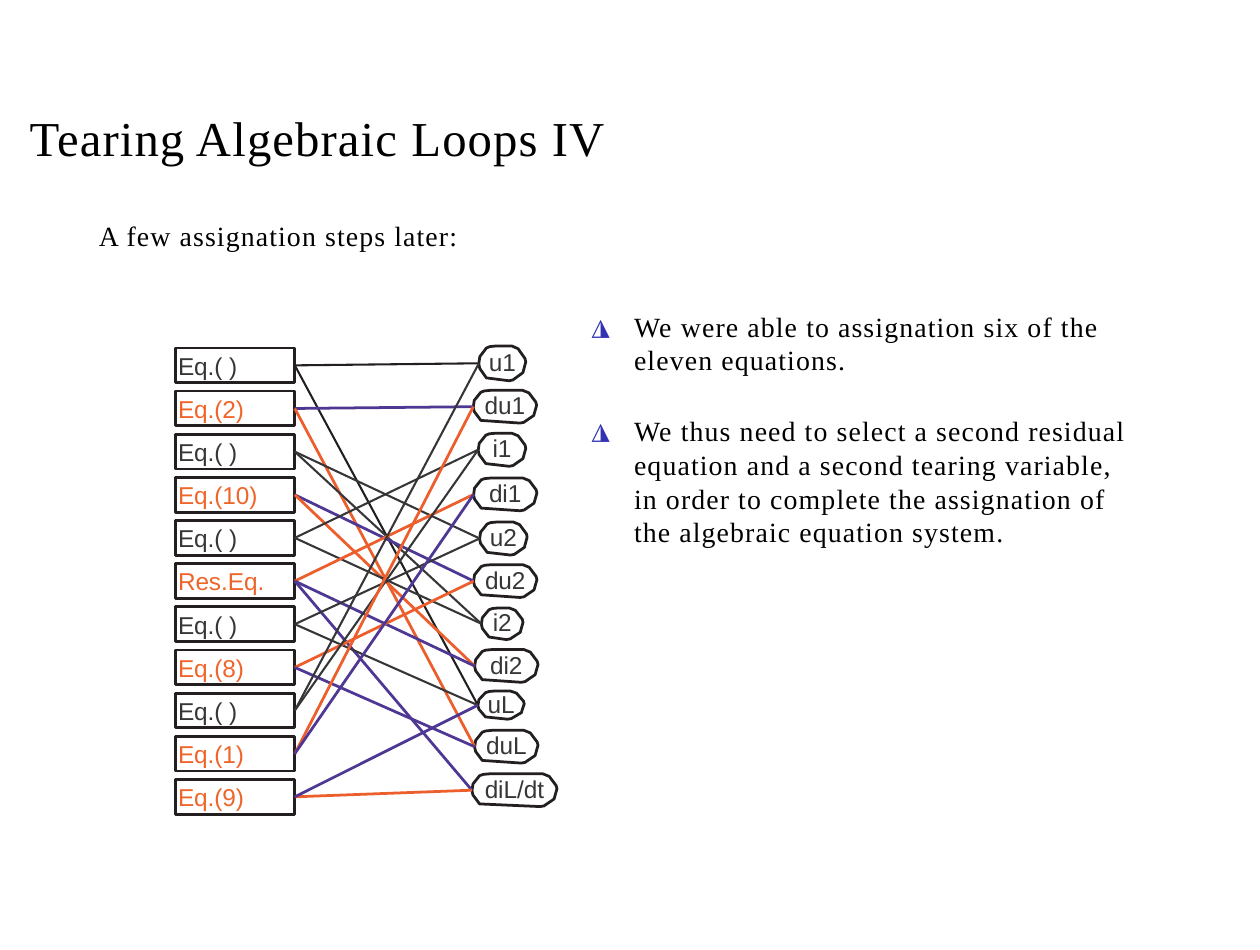
from lxml.etree import SubElement
from pptx import Presentation
from pptx.dml.color import RGBColor
from pptx.enum.shapes import MSO_CONNECTOR, MSO_SHAPE
from pptx.enum.text import MSO_ANCHOR, MSO_AUTO_SIZE, PP_ALIGN
from pptx.oxml.ns import qn
from pptx.util import Pt

COLORS = {
    "black": "000000",
    "outline": "231F20",
    "gray": "363639",
    "orange": "EF6529",
    "orange link": "EC5E2C",
    "violet": "4F3893",
    "bullet": "3232B2",
}
SERIF = "Times New Roman"
SANS = "Arial"


def set_text(frame, text, size, font, color, align=PP_ALIGN.LEFT,
             anchor=MSO_ANCHOR.TOP, wrap=True, spacing=0, left=0, bottom=0):
    frame.text = text
    frame.auto_size = MSO_AUTO_SIZE.NONE
    frame.word_wrap = wrap
    frame.vertical_anchor = anchor
    frame.margin_left, frame.margin_bottom = Pt(left), Pt(bottom)
    frame.margin_right = frame.margin_top = 0
    for paragraph in frame.paragraphs:
        paragraph.alignment = align
        paragraph.font.size = Pt(size)
        paragraph.font.name = font
        paragraph.font.color.rgb = RGBColor.from_string(COLORS[color])
        for run in paragraph.runs:
            run.font._element.set("spc", str(round(spacing * 100)))


def outline_node(node):
    node.shadow.inherit = False
    node.fill.background()
    node.line.color.rgb = RGBColor.from_string(COLORS["outline"])
    node.line.width = Pt(0.79)


deck = Presentation()
deck.slide_width = Pt(362)
deck.slide_height = Pt(273)
slide = deck.slides.add_slide(deck.slide_layouts[5])
shapes = slide.shapes

title = shapes.title
title.left, title.top, title.width, title.height = Pt(8.5), Pt(30.9), Pt(200), Pt(17)
set_text(title.text_frame, "Tearing Algebraic Loops IV", 14, SERIF, "black", spacing=0.3)

intro = shapes.add_textbox(Pt(28.4), Pt(62.7), Pt(150), Pt(10))
set_text(intro.text_frame, "A few assignation steps later:", 8, SERIF, "black", spacing=0.3)

equations = ["Eq.( )", "Eq.(2)", "Eq.( )", "Eq.(10)", "Eq.( )", "Res.Eq.",
             "Eq.( )", "Eq.(8)", "Eq.( )", "Eq.(1)", "Eq.(9)"]
EQ_LEFT, EQ_TOP, EQ_WIDTH, EQ_HEIGHT, EQ_PITCH = 50.4, 100, 34.3, 10, 12.4
equation_ends = []
for row, label in enumerate(equations):
    top = EQ_TOP + row * EQ_PITCH
    equation = shapes.add_shape(MSO_SHAPE.RECTANGLE, Pt(EQ_LEFT), Pt(top),
                                Pt(EQ_WIDTH), Pt(EQ_HEIGHT))
    outline_node(equation)
    color = "gray" if label == "Eq.( )" else "orange"
    set_text(equation.text_frame, label, 7, SANS, color,
             anchor=MSO_ANCHOR.MIDDLE, wrap=False, left=0.8)
    equation_ends.append((EQ_LEFT + EQ_WIDTH, top + EQ_HEIGHT / 2))

variables = [
    ("u1", 137.6, 99.4, 13.5, 10),
    ("du1", 136, 112.2, 18.2, 9.4),
    ("i1", 137.4, 124.5, 13.7, 9.5),
    ("di1", 136.1, 137.4, 18.2, 9.4),
    ("u2", 137.8, 150, 13.7, 9.5),
    ("du2", 136.1, 162.3, 18.2, 9.4),
    ("i2", 138.3, 174.7, 12, 9.1),
    ("di2", 136.4, 186.7, 18.2, 9.4),
    ("uL", 137.3, 198.6, 13.3, 8.1),
    ("duL", 136.4, 209.9, 18.2, 9.4),
    ("diL/dt", 135.6, 222.4, 24.4, 9.4),
]
variable_ends = {}
for label, left, top, width, height in variables:
    outline = [
        (5, 0), (3.2, 0.02), (2.2, 0.06), (0.3, 0.31), (0, 0.52), (0.3, 0.65),
        (2.2, 0.92), (width - 4.8, 1), (width - 3.7, 0.98), (width - 0.8, 0.77),
        (width, 0.46), (width - 0.2, 0.36), (width - 2.2, 0.08), (width - 4, 0),
    ]
    points = [(Pt(left + x), Pt(top + y * height)) for x, y in outline]
    builder = shapes.build_freeform(*points[0])
    builder.add_line_segments(points[1:], close=True)
    variable = builder.convert_to_shape()
    outline_node(variable)
    set_text(variable.text_frame, label, 7, SANS, "gray", PP_ALIGN.CENTER,
             MSO_ANCHOR.MIDDLE, wrap=False, bottom=1)
    variable_ends[label] = (left, top + height / 2)

links = [
    (0, "u1", "outline"), (0, "uL", "outline"),
    (1, "du1", "violet"), (1, "duL", "orange link"),
    (2, "u2", "gray"), (2, "i2", "gray"),
    (3, "du2", "violet"), (3, "di2", "orange link"),
    (4, "i1", "gray"), (4, "i2", "gray"),
    (5, "di1", "orange link"), (5, "di2", "violet"), (5, "diL/dt", "violet"),
    (6, "u2", "gray"), (6, "uL", "gray"),
    (7, "du2", "orange link"), (7, "duL", "violet"),
    (8, "i1", "gray"), (8, "u1", "gray"),
    (9, "du1", "orange link"), (9, "di1", "violet"),
    (10, "diL/dt", "orange link"), (10, "uL", "violet"),
]
for row, label, color in links:
    ends = [Pt(value) for value in equation_ends[row] + variable_ends[label]]
    link = shapes.add_connector(MSO_CONNECTOR.STRAIGHT, *ends)
    link.line.color.rgb = RGBColor.from_string(COLORS[color])
    link.line.width = Pt(0.79 if color in ("violet", "orange link") else 0.59)
    SubElement(link._element.spPr, qn("a:effectLst"))

findings = shapes.add_textbox(Pt(169.2), Pt(88.8), Pt(156.2), Pt(70))
set_text(
    findings.text_frame,
    "We were able to assignation six of the eleven equations.\n"
    "We thus need to select a second residual equation and a second tearing "
    "variable, in order to complete the assignation of the algebraic equation system.",
    8, SERIF, "black", spacing=0.3)
for finding in findings.text_frame.paragraphs:
    finding.line_spacing = Pt(9.7)
    properties = finding._element.get_or_add_pPr()
    properties.set("marL", str(Pt(13)))
    properties.set("indent", str(-Pt(12.2)))
    bullet_color = SubElement(properties, qn("a:buClr"))
    SubElement(bullet_color, qn("a:srgbClr"), val=COLORS["bullet"])
    SubElement(properties, qn("a:buSzPct"), val="85000")
    SubElement(properties, qn("a:buFont"), typeface="Lato")
    SubElement(properties, qn("a:buChar"), char="◮")
    properties.append(properties.find(qn("a:defRPr")))
findings.text_frame.paragraphs[1].space_before = Pt(10.6)

deck.save("out.pptx")
